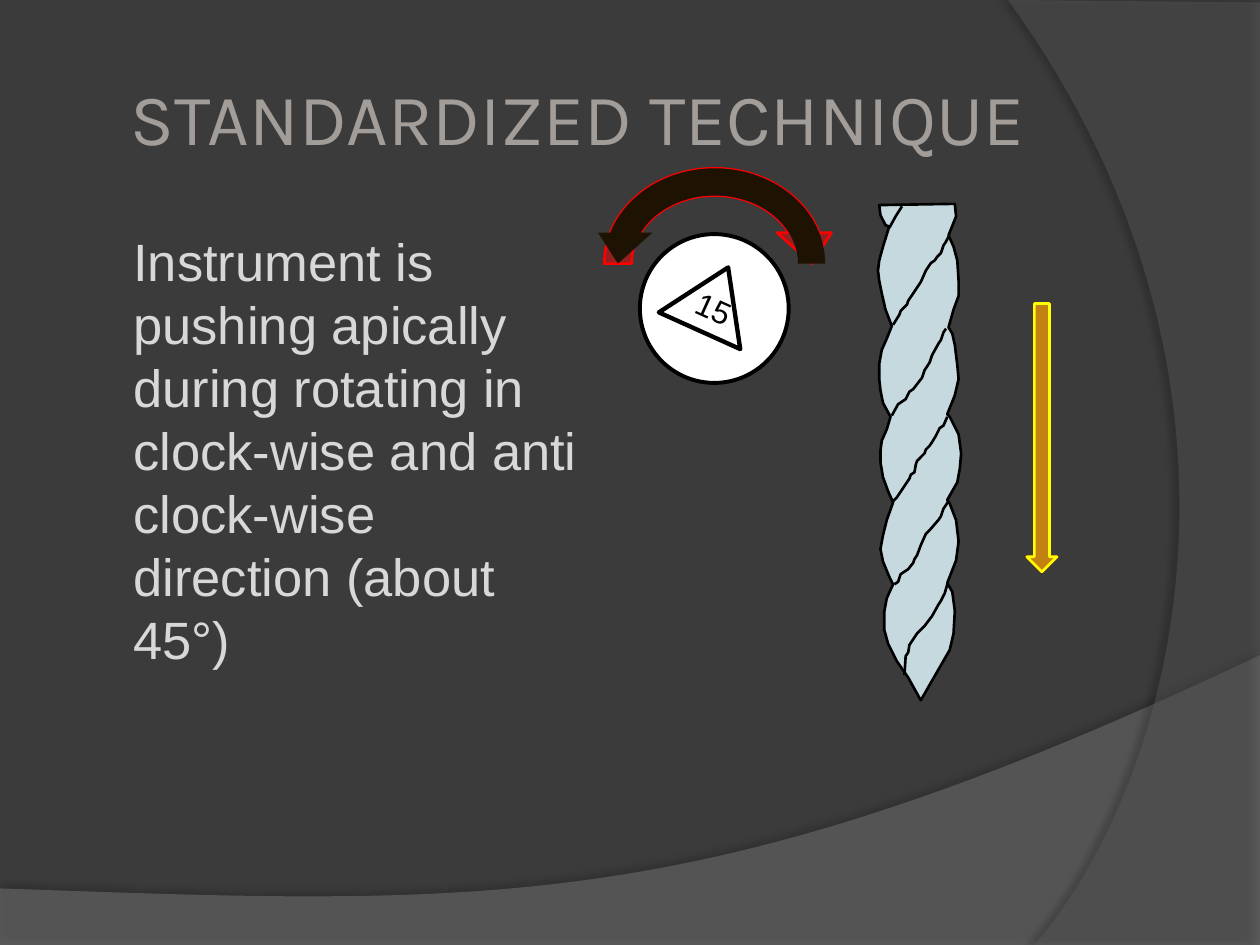
from lxml import etree
from pptx import Presentation
from pptx.dml.color import RGBColor
from pptx.enum.shapes import MSO_SHAPE as SHAPE
from pptx.enum.text import MSO_ANCHOR as ANCHOR, PP_ALIGN as ALIGN
from pptx.oxml.ns import qn
from pptx.util import Cm, Pt

HUNDREDTH_INCH = 0.0254

DRILL_BODY = [
    (61, 0), (1, 1), (2, 9), (6, 17), (9, 18), (4, 34), (1, 45), (0, 53), (1, 61),
    (3, 71), (6, 84), (11, 97), (7, 107), (3, 116), (1, 127), (1, 139), (2, 148),
    (4, 158), (10, 169), (7, 179), (3, 188), (2, 196), (2, 205), (4, 217), (8, 228),
    (12, 237), (7, 251), (4, 263), (2, 274), (4, 284), (9, 296), (12, 302), (7, 313),
    (5, 324), (5, 338), (8, 349), (15, 363), (24, 376), (34, 394), (57, 354), (60, 341),
    (61, 323), (59, 308), (55, 301), (62, 283), (64, 268), (62, 251), (57, 238),
    (55, 235), (63, 221), (65, 210), (66, 198), (64, 183), (57, 169), (55, 167),
    (61, 152), (64, 139), (63, 128), (61, 112), (59, 103), (56, 98), (60, 84), (64, 73),
    (64, 61), (63, 45), (60, 34), (56, 25), (62, 10),
]
DRILL_GROOVES = [
    [(21, 374), (22, 359), (24, 356), (25, 350), (29, 344), (31, 341), (37, 335),
     (43, 327), (48, 318), (50, 315), (53, 309), (55, 302)],
    [(13, 302), (16, 300), (18, 294), (24, 290), (28, 285), (29, 282), (31, 279),
     (34, 271), (38, 262), (41, 259), (48, 251), (50, 248), (52, 242), (54, 239),
     (56, 236)],
    [(12, 236), (15, 233), (19, 227), (23, 221), (25, 218), (26, 215), (29, 213),
     (30, 207), (31, 204), (37, 198), (38, 195), (41, 192), (43, 189), (46, 184),
     (49, 178), (52, 176), (55, 169)],
    [(11, 168), (16, 159), (22, 155), (25, 149), (28, 147), (35, 138), (37, 132),
     (41, 126), (43, 120), (48, 111), (50, 108), (52, 102), (54, 99)],
    [(12, 96), (17, 88), (18, 85), (23, 80), (24, 77), (28, 71), (32, 65), (34, 62),
     (38, 53), (40, 50), (42, 47), (45, 45), (47, 42), (50, 39), (52, 33), (54, 30),
     (56, 26)],
    [(9, 19), (14, 10), (19, 2)],
]


def rgb(color):
    return RGBColor.from_string(color)


def set_alpha(parent, percent):
    clr = next(parent.iter(qn("a:srgbClr")))
    etree.SubElement(clr, qn("a:alpha")).set("val", str(percent * 1000))


def style(sp, fill=None, alpha=None, line=None, width=1.5):
    sp.shadow.inherit = False
    if fill:
        sp.fill.solid()
        sp.fill.fore_color.rgb = rgb(fill)
        if alpha:
            set_alpha(sp.fill._xPr.find(qn("a:solidFill")), alpha)
    else:
        sp.fill.background()
    if line:
        sp.line.color.rgb = rgb(line)
        sp.line.width = Pt(width)
    else:
        sp.line.fill.background()
    return sp


def add_shape(s, kind, x, y, w, h, **fmt):
    return style(s.shapes.add_shape(kind, Cm(x), Cm(y), Cm(w), Cm(h)), **fmt)


def add_outline(s, x, y, points, unit=1, close=True, **fmt):
    pts = [(Cm(px * unit), Cm(py * unit)) for px, py in points]
    fb = s.shapes.build_freeform(*pts[0], scale=1.0)
    fb.add_line_segments(pts[1:], close=close)
    return style(fb.convert_to_shape(Cm(x), Cm(y)), **fmt)


def add_text(s, text, x, y, w, h, font="Arial", size=18, color="000000", align=ALIGN.LEFT,
             anchor=ANCHOR.TOP, indent=0, leading=None):
    sp = s.shapes.add_textbox(Cm(x), Cm(y), Cm(w), Cm(h))
    tf = sp.text_frame
    tf.word_wrap = True
    tf.vertical_anchor = anchor
    p = tf.paragraphs[0]
    p.alignment = align
    if leading:
        p.line_spacing = Pt(leading)
    if indent:
        p._p.get_or_add_pPr().set("marL", str(Cm(indent)))
    r = p.add_run()
    r.text = text
    r.font.name = font
    r.font.size = Pt(size)
    r.font.color.rgb = rgb(color)
    return sp


def bezier(a, b, c, d, steps=60):
    def point(t):
        u = 1 - t
        weights = (u ** 3, 3 * u * u * t, 3 * u * t * t, t ** 3)
        return tuple(sum(k * q[i] for k, q in zip(weights, (a, b, c, d))) for i in (0, 1))
    return [point(n / steps) for n in range(steps + 1)]


def add_swoosh(s, x, y, corners, curve, fill, alpha, shadow_alpha, distance, angle):
    sp = add_outline(s, x, y, corners + bezier(*curve), fill=fill, alpha=alpha)
    effects = sp._element.spPr.find(qn("a:effectLst"))
    shadow = etree.SubElement(effects, qn("a:outerShdw"), blurRad=str(Pt(4)),
                              dist=str(Pt(distance)), dir=str(angle * 60000))
    etree.SubElement(shadow, qn("a:srgbClr"), val="000000")
    set_alpha(shadow, shadow_alpha)


def add_backdrop(s, w, h):
    s.background.fill.solid()
    s.background.fill.fore_color.rgb = rgb("3B3B3B")
    add_swoosh(s, 0, 13.21, [(0, 5.84), (w, 5.84)],
               [(w, 0), (14.2, 5.31), (9.93, 5.05), (0, 4.7)],
               "7F7F7F", 45, 35, 3.5, 270)
    add_swoosh(s, w - 5.08, 0, [(5.08, 0.05), (5.08, h)],
               [(0.53, h), (3.43, 15.72), (5.54, 7.62), (0, 0)],
               "5E5E5E", 40, 45, 4, 180)


def add_rotation_arrows(s, x, y, w, h):
    add_shape(s, SHAPE.CIRCULAR_ARROW, x, y, w, h, fill="FF0000", alpha=46, line="FF0000")
    back = add_shape(s, SHAPE.CIRCULAR_ARROW, x, y, w, h, fill="1E1303")
    back._element.spPr.find(qn("a:xfrm")).set("flipH", "1")


def add_handle(s, x, y, size):
    add_shape(s, SHAPE.OVAL, x, y, size, size, fill="FFFFFF", line="000000", width=2.25)
    mark = add_shape(s, SHAPE.ISOSCELES_TRIANGLE, x + 0.59, y + 0.61, 1.8, 1.4,
                     fill="FFFFFF", line="000000", width=2.5)
    label = add_text(s, "15", x + 0.59, y + 0.99, 1.8, 1.02, align=ALIGN.CENTER)
    mark.rotation = label.rotation = 24.3


def add_drill(s, x, y):
    add_outline(s, x, y, DRILL_BODY, HUNDREDTH_INCH, fill="C5D9DF", line="000000")
    for groove in DRILL_GROOVES:
        add_outline(s, x, y, groove, HUNDREDTH_INCH, close=False, line="000000")


def add_push_arrow(s, x, y, w, h):
    for color in ("FF0000", "FFFF00"):
        add_shape(s, SHAPE.DOWN_ARROW, x, y, w, h, fill=color, alpha=44, line=color)


def main():
    prs = Presentation()
    prs.slide_width, prs.slide_height = Cm(25.4), Cm(19.05)
    s = prs.slides.add_slide(prs.slide_layouts[6])
    add_backdrop(s, 25.4, 19.05)
    add_text(s, "STANDARDIZED TECHNIQUE", 1.27, 0.76, 20.75, 3.18, font="Karla", size=41.4,
             color="A29D99", align=ALIGN.CENTER, anchor=ANCHOR.MIDDLE)
    add_text(s, "Instrument is pushing apically during rotating in clock-wise and anti "
             "clock-wise direction (about 45°)", 1.27, 4.5, 10.64, 12.57, size=30,
             color="D8D8D8", indent=1.17, leading=36)
    add_push_arrow(s, 20.7, 6.12, 0.61, 5.41)
    add_rotation_arrows(s, 11.91, 3.12, 5, 4.39)
    add_handle(s, 12.9, 4.72, 3)
    add_drill(s, 17.7, 4.11)
    prs.save("out.pptx")


if __name__ == "__main__":
    main()
